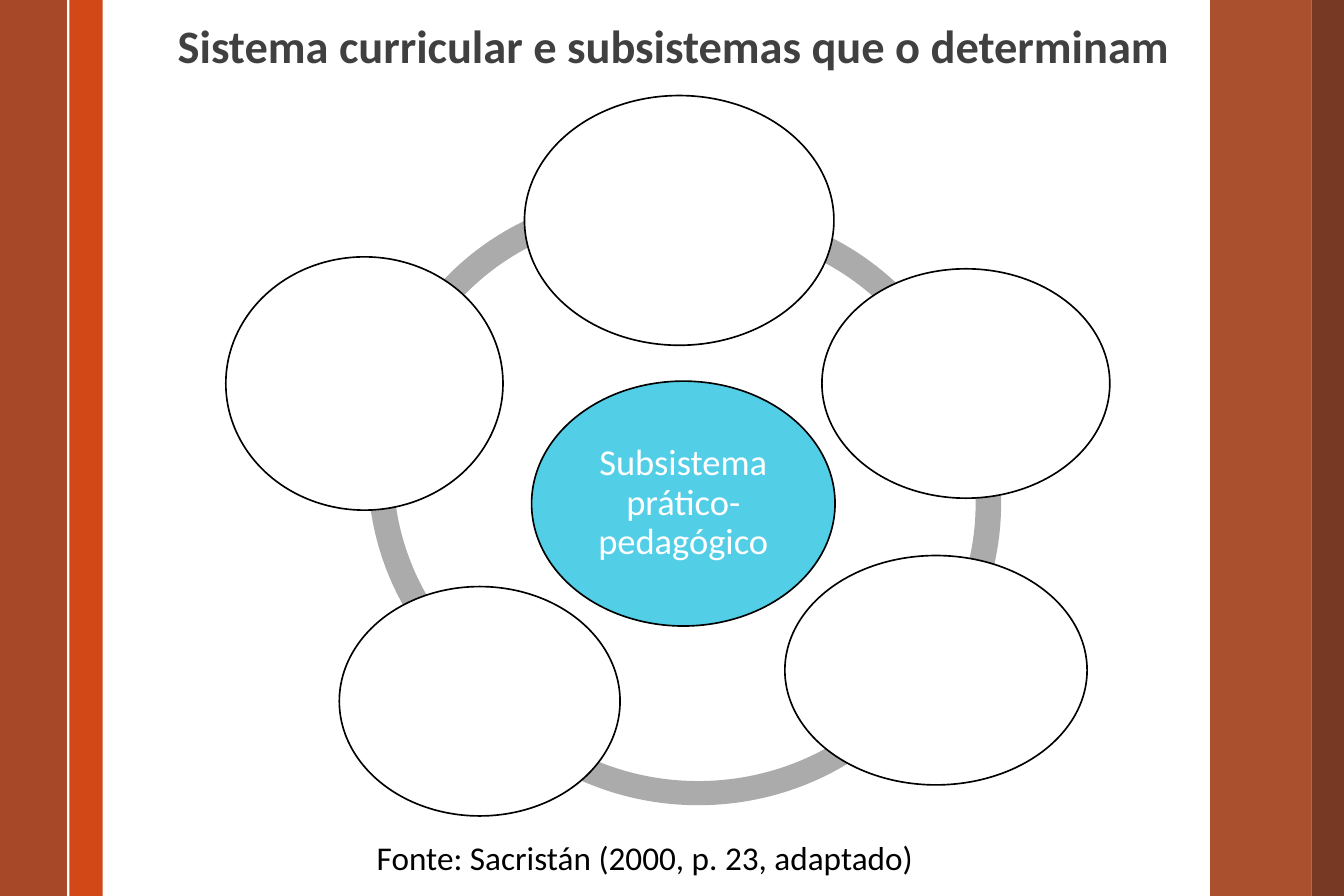
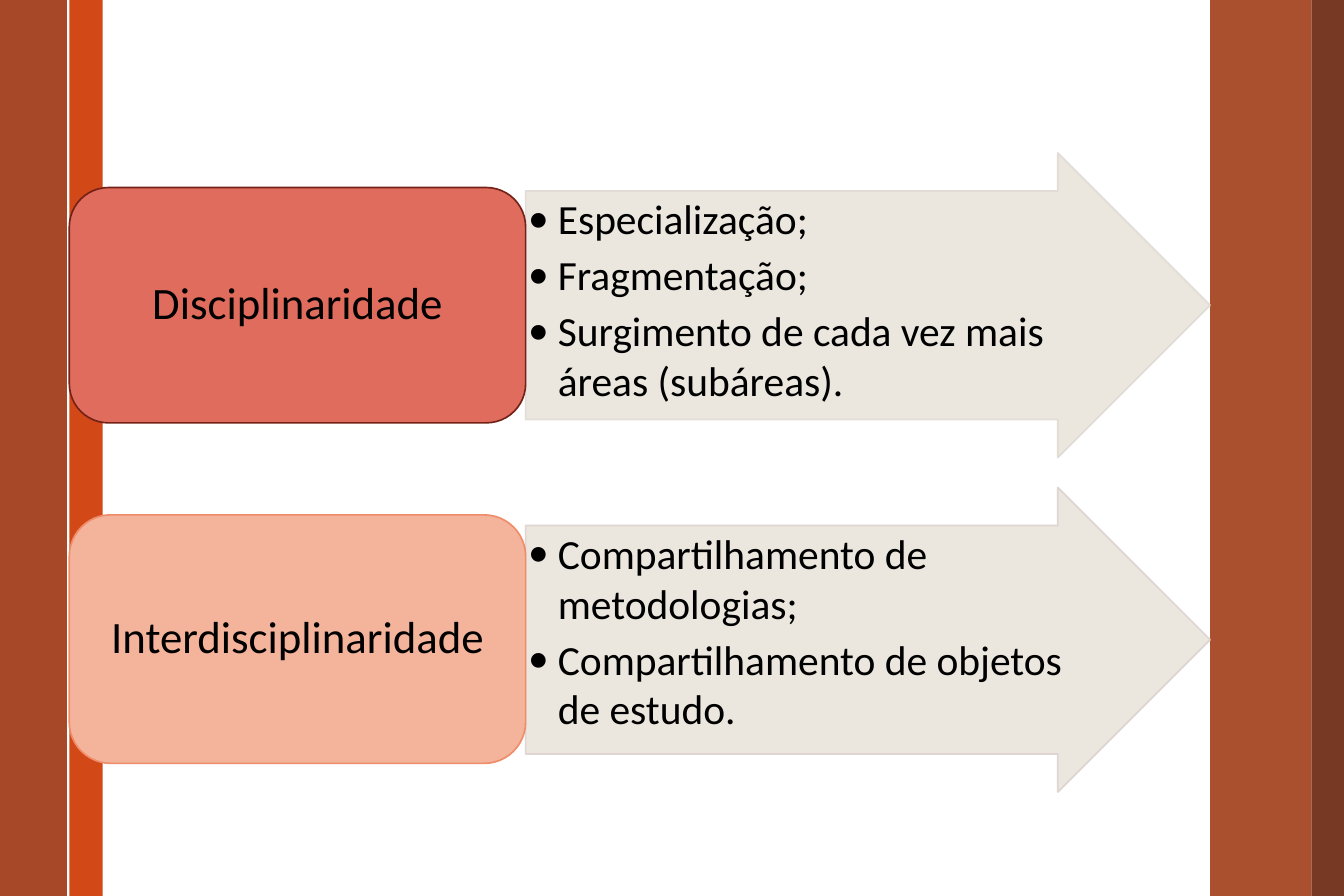
from lxml import etree
from pptx import Presentation
from pptx import util as u
from pptx.dml.color import RGBColor
from pptx.enum import shapes, text
from pptx.oxml.ns import qn

ORANGE = RGBColor(0xD3, 0x48, 0x17)
RUST = RGBColor(0x9E, 0x36, 0x11)
BROWN = RGBColor(0x69, 0x24, 0x0C)
GRAY = RGBColor(0xAB, 0xAB, 0xAB)
DARK_GRAY = RGBColor(0x40, 0x40, 0x40)
CYAN = RGBColor(0x53, 0xCE, 0xE7)
SAND = RGBColor(0xE9, 0xE5, 0xDC)
WHITE = RGBColor(0xFF, 0xFF, 0xFF)
BLACK = RGBColor(0, 0, 0)
KIND = shapes.MSO_SHAPE
CENTER = text.PP_ALIGN.CENTER
MIDDLE = text.MSO_ANCHOR.MIDDLE
TOP = text.MSO_ANCHOR.TOP


def add_figure(slide, kind, box, fill, line=None, alpha=100):
    shape = slide.shapes.add_shape(kind, *map(u.Inches, box))
    shape.shadow.inherit = False
    shape.fill.solid()
    shape.fill.fore_color.rgb = fill
    if line is None:
        shape.line.fill.background()
    else:
        shape.line.color.rgb = line
        shape.line.width = u.Pt(1)
    if alpha < 100:
        for color in shape._element.spPr.iter(qn("a:srgbClr")):
            etree.SubElement(color, qn("a:alpha")).set("val", str(alpha * 1000))
    return shape


def write_text(shape, lines, size, color, frame_format, paragraph_format, bold=False, bullet=False):
    frame = shape.text_frame
    for name, value in {"word_wrap": True, **frame_format}.items():
        setattr(frame, name, value)
    for index, line in enumerate(lines):
        paragraph = frame.add_paragraph() if index else frame.paragraphs[0]
        for name, value in paragraph_format.items():
            setattr(paragraph, name, value)
        run = paragraph.add_run()
        run.text = line
        font_format = {"name": "Calibri", "size": u.Pt(size), "bold": bold}
        for name, value in font_format.items():
            setattr(run.font, name, value)
        run.font.color.rgb = color
        if bullet:
            properties = paragraph._p.get_or_add_pPr()
            properties.set("marL", str(u.Inches(0.25)))
            properties.set("indent", str(u.Inches(-0.25)))
            etree.SubElement(properties, qn("a:buFont")).set("typeface", "Calibri")
            etree.SubElement(properties, qn("a:buChar")).set("char", "•")


presentation = Presentation()
presentation.slide_width = u.Inches(11.25)
presentation.slide_height = u.Inches(7.5)
blank = presentation.slide_layouts[6]
system_slide = presentation.slides.add_slide(blank)
discipline_slide = presentation.slides.add_slide(blank)

BANDS = [
    (0.58, 0.28, ORANGE, 100),
    (0, 0.56, RUST, 90),
    (10.13, 0.85, RUST, 87),
    (10.98, 0.27, BROWN, 90),
]
for slide in presentation.slides:
    for left, width, color, alpha in BANDS:
        add_figure(slide, KIND.RECTANGLE, (left, 0, width, 7.5), color, alpha=alpha)
    rule = slide.shapes.add_connector(
        shapes.MSO_CONNECTOR.STRAIGHT, u.Inches(0.57), 0, u.Inches(0.57), u.Inches(7.5))
    rule.line.color.rgb = WHITE
    rule.line.width = u.Pt(1.5)
    etree.SubElement(rule._element.spPr, qn("a:effectLst"))

RING_ARCS = [
    ((3.08, 1.62, 4.63, 4.63), 140, 285),
    ((3.53, 2.35, 4.63, 4.39), 17, 125),
    ((3.73, 1.9, 4.65, 4.63), 330, 23),
    ((3.6, 1.74, 4.63, 4.63), 280, 335),
]
for box, start, end in RING_ARCS:
    arc = add_figure(system_slide, KIND.BLOCK_ARC, box, GRAY)
    for index, value in enumerate((start * 0.6, end * 0.6, 0.046)):
        arc.adjustments[index] = value

center = add_figure(system_slide, KIND.OVAL, (4.45, 3.19, 2.54, 2.05), CYAN, BLACK)
thin_margins = dict.fromkeys(
    ("margin_left", "margin_top", "margin_right", "margin_bottom"), u.Inches(0.03))
label_paragraph = {"alignment": CENTER, "line_spacing": 0.9}
write_text(center, ["Subsistema prático-pedagógico"], 22, WHITE,
           {"vertical_anchor": MIDDLE, **thin_margins}, label_paragraph)

SUBSYSTEMS = [
    (4.39, 0.8, 2.59, 2.09),
    (6.88, 2.25, 2.41, 1.92),
    (6.57, 4.65, 2.53, 1.92),
    (2.84, 4.91, 2.35, 1.92),
    (1.89, 2.15, 2.32, 2.12),
]
for box in SUBSYSTEMS:
    add_figure(system_slide, KIND.OVAL, box, WHITE, BLACK)

CAPTIONS = [
    ((0.35, 0.15, 10.57, 0.41), "Sistema curricular e subsistemas que o determinam", 28, DARK_GRAY, True),
    ((0.05, 7, 10.7, 0.48), "Fonte: Sacristán (2000, p. 23, adaptado)", 20, BLACK, False),
]
for box, caption, size, color, bold in CAPTIONS:
    textbox = system_slide.shapes.add_textbox(*map(u.Inches, box))
    write_text(textbox, [caption], size, color, {"vertical_anchor": TOP}, label_paragraph, bold)

APPROACHES = [
    ("Disciplinaridade", 1.57, 1.97, RGBColor(0xDF, 0x6C, 0x5D), RGBColor(0x74, 0x22, 0x17),
     RGBColor(0xE0, 0xDB, 0xD4),
     ["Especialização;", "Fragmentação;", "Surgimento de cada vez mais áreas (subáreas)."]),
    ("Interdisciplinaridade", 4.31, 2.08, RGBColor(0xF4, 0xB3, 0x9B), RGBColor(0xEF, 0x8C, 0x6A),
     RGBColor(0xDD, 0xD3, 0xD0),
     ["Compartilhamento de metodologias;", "Compartilhamento de objetos de estudo."]),
]
arrow_frame = {"vertical_anchor": TOP, **dict.fromkeys(thin_margins, u.Inches(0.02))}
arrow_paragraph = {"alignment": text.PP_ALIGN.LEFT, "space_after": u.Pt(3.75)}
label_frame = {
    "vertical_anchor": MIDDLE,
    "margin_left": u.Inches(0.11),
    "margin_right": u.Inches(0.11),
    "margin_top": u.Inches(0.06),
    "margin_bottom": u.Inches(0.06),
}
for row, (label, top, height, fill, line, arrow_line, traits) in enumerate(APPROACHES):
    arrow = add_figure(discipline_slide, KIND.RIGHT_ARROW,
                       (4.4, 1.28 + row * 2.8, 5.73, 2.55), SAND, arrow_line, 90)
    arrow.adjustments[0] = 0.75
    arrow.adjustments[1] = 0.5
    write_text(arrow, traits, 25, BLACK, arrow_frame, arrow_paragraph, bullet=True)
    card = add_figure(discipline_slide, KIND.ROUNDED_RECTANGLE, (0.58, top, 3.82, height), fill, line)
    write_text(card, [label], 27, BLACK, label_frame, label_paragraph)

presentation.save("out.pptx")
